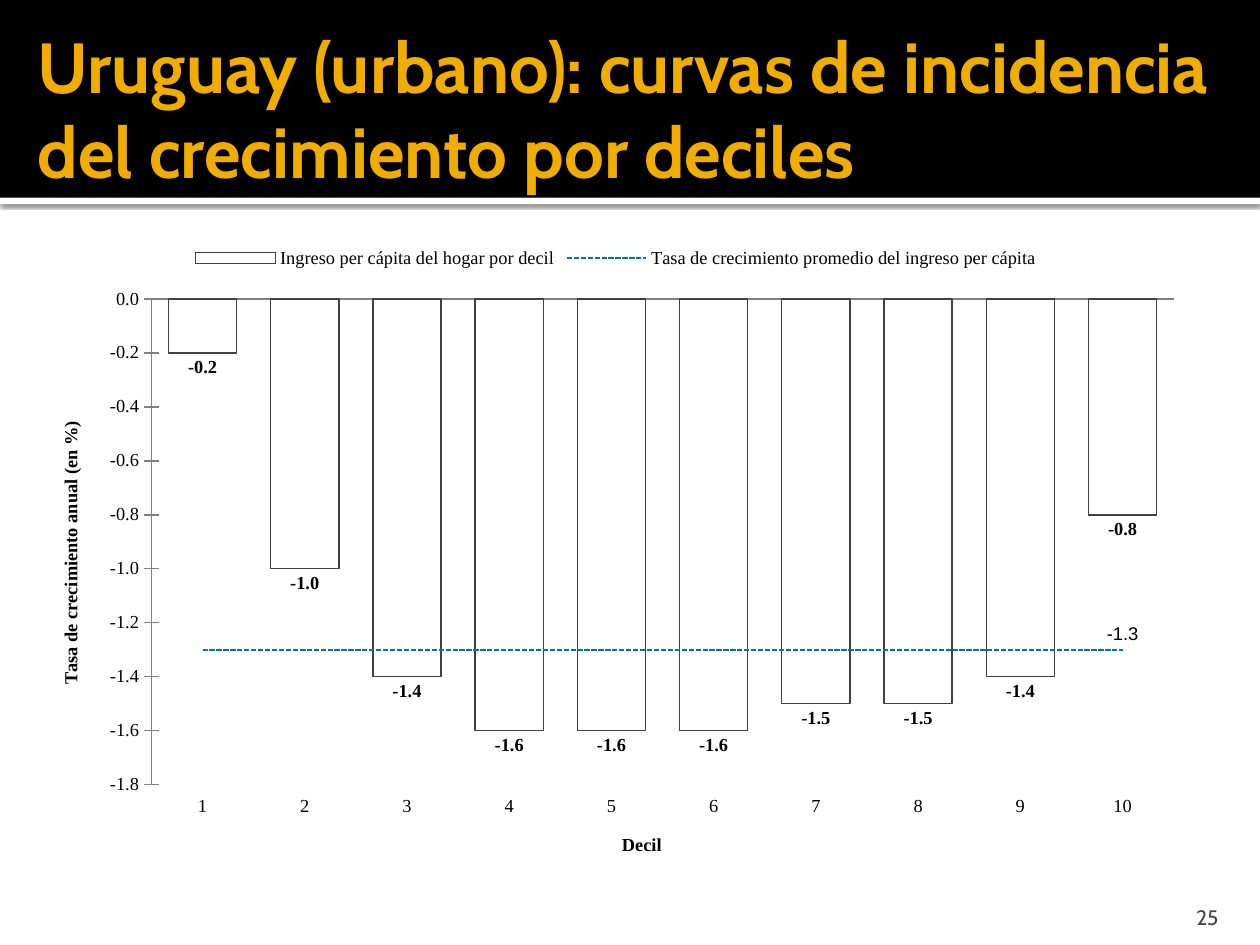
import pptx
import pptx.chart.data
import pptx.dml.color
import pptx.enum.chart
import pptx.enum.dml
import pptx.enum.shapes
import pptx.enum.text
import pptx.oxml
import pptx.oxml.ns
import pptx.util
from pptx.util import Inches

COLORS = {
    "black": "000000", "white": "FFFFFF", "title": "F0AD00", "number": "454545",
    "bar_line": "404040", "average": "0070C0", "axis": "808080",
}
CHART_FONT = "Times New Roman"
NUMBER_FORMAT = "#,##0.0"
DECILE_GROWTH = [-0.2, -1.0, -1.4, -1.6, -1.6, -1.6, -1.5, -1.5, -1.4, -0.8]
AVERAGE_GROWTH = -1.3


def color(name):
    return pptx.dml.color.RGBColor.from_string(COLORS[name])


def paint(fill, name):
    fill.solid()
    fill.fore_color.rgb = color(name)


def draw_line(line, name, width):
    line.color.rgb = color(name)
    line.width = pptx.util.Pt(width)


def style_font(font, size, name, family, bold=False):
    font.size = pptx.util.Pt(size)
    font.color.rgb = color(name)
    font.name = family
    font.bold = bold


def xml(text):
    """Parse an element, with the namespaces declared at its %s mark."""
    return pptx.oxml.parse_xml(text % pptx.oxml.ns.nsdecls("a", "c"))


def add_band(page, top, height, name):
    band = page.shapes.add_shape(
        pptx.enum.shapes.MSO_SHAPE.RECTANGLE, 0, Inches(top), Inches(10), Inches(height))
    paint(band.fill, name)
    band.line.fill.background()
    band.shadow.inherit = False
    return band


def add_soft_shadow(shape):
    effects = shape._element.spPr.find(pptx.oxml.ns.qn("a:effectLst"))
    effects.append(xml(
        '<a:outerShdw %s blurRad="31750" dist="10160" dir="5400000" algn="tl" rotWithShape="0">'
        '<a:srgbClr val="000000"><a:alpha val="60000"/></a:srgbClr></a:outerShdw>'))


def add_text(page, text, place, margins, anchor, align, size, name, bold=False):
    box = page.shapes.add_textbox(*map(Inches, place))
    frame = box.text_frame
    frame.word_wrap = True
    frame.vertical_anchor = anchor
    (frame.margin_left, frame.margin_top,
     frame.margin_right, frame.margin_bottom) = map(Inches, margins)
    para = frame.paragraphs[0]
    para.text = text
    para.alignment = align
    style_font(para.font, size, name, "Cabin", bold)


def style_axis(axis, title, tick_mark):
    axis.has_major_gridlines = False
    axis.major_tick_mark = tick_mark
    axis.minor_tick_mark = pptx.enum.chart.XL_TICK_MARK.NONE
    draw_line(axis.format.line, "axis", 0.75)
    style_font(axis.tick_labels.font, 10.5, "black", CHART_FONT)
    para = axis.axis_title.text_frame.paragraphs[0]
    para.text = title
    style_font(para.font, 10.5, "black", CHART_FONT, True)


def move_last_series_to_line(chart):
    """Turn the last column series into a line plot on the same axes."""
    qn = pptx.oxml.ns.qn
    bars = chart.plots[0]._element
    series = bars.findall(qn("c:ser"))[-1]
    invert = series.find(qn("c:invertIfNegative"))
    if invert is not None:
        series.remove(invert)
    lines = xml('<c:lineChart %s><c:grouping val="standard"/><c:varyColors val="0"/>'
                '<c:marker val="1"/></c:lineChart>')
    lines.insert(2, series)
    for axis_id in bars.findall(qn("c:axId")):
        lines.append(xml('<c:axId %s val="' + axis_id.get("val") + '"/>'))
    bars.addnext(lines)


def place_plot_area(chart, left, top, width, height):
    """Fix the inner plot area, in fractions of the chart."""
    qn = pptx.oxml.ns.qn
    area = chart._chartSpace.chart.plotArea
    old_layout = area.find(qn("c:layout"))
    if old_layout is not None:
        area.remove(old_layout)
    parts = "".join(f'<c:{key} val="{value}"/>' for key, value in
                    zip("xywh", (left, top, width, height)))
    area.insert(0, xml(
        '<c:layout %s><c:manualLayout><c:layoutTarget val="inner"/>'
        '<c:xMode val="edge"/><c:yMode val="edge"/>'
        + parts + '</c:manualLayout></c:layout>'))


def style_bars(plot):
    plot.gap_width = 50
    plot.vary_by_categories = False
    series = plot.series[0]
    series.invert_if_negative = False
    paint(series.format.fill, "white")
    draw_line(series.format.line, "bar_line", 0.75)
    labels = series.data_labels
    labels.show_value = True
    labels.number_format = NUMBER_FORMAT
    labels.number_format_is_linked = False
    labels.position = pptx.enum.chart.XL_LABEL_POSITION.OUTSIDE_END
    style_font(labels.font, 10.5, "black", CHART_FONT, True)


def style_average(series):
    series.smooth = False
    series.marker.style = pptx.enum.chart.XL_MARKER_STYLE.NONE
    draw_line(series.format.line, "average", 1)
    series.format.line.dash_style = pptx.enum.dml.MSO_LINE.SQUARE_DOT
    series.data_labels.show_value = False
    label = series.points[len(DECILE_GROWTH) - 1].data_label
    style_font(label.font, 10.5, "black", "Arial")
    label.position = pptx.enum.chart.XL_LABEL_POSITION.ABOVE


def add_growth_chart(page):
    count = len(DECILE_GROWTH)
    data = pptx.chart.data.CategoryChartData(number_format=NUMBER_FORMAT)
    data.categories = [str(decile) for decile in range(1, count + 1)]
    data.add_series("Ingreso per cápita del hogar por decil", DECILE_GROWTH)
    data.add_series("Tasa de crecimiento promedio del ingreso per cápita",
                    [AVERAGE_GROWTH] * count)
    chart = page.shapes.add_chart(
        pptx.enum.chart.XL_CHART_TYPE.COLUMN_CLUSTERED,
        Inches(0.28), Inches(1.86), Inches(9.22), Inches(5.14), data).chart
    style_font(chart.font, 10.5, "black", CHART_FONT)
    chart.has_title = False
    chart.has_legend = True
    chart.legend.position = pptx.enum.chart.XL_LEGEND_POSITION.TOP
    chart.legend.include_in_layout = False
    style_font(chart.legend.font, 10.5, "black", CHART_FONT)

    ticks = pptx.enum.chart.XL_TICK_MARK
    style_axis(chart.category_axis, "Decil", ticks.NONE)
    chart.category_axis.tick_label_position = pptx.enum.chart.XL_TICK_LABEL_POSITION.LOW
    values = chart.value_axis
    style_axis(values, "Tasa de crecimiento anual (en %)", ticks.CROSS)
    values.minimum_scale, values.maximum_scale, values.major_unit = -1.8, 0, 0.2
    values.tick_labels.number_format = NUMBER_FORMAT
    values.tick_labels.number_format_is_linked = False

    move_last_series_to_line(chart)
    style_bars(chart.plots[0])
    style_average(chart.plots[1].series[0])
    place_plot_area(chart, 0.1, 0.1, 0.88, 0.75)


def main():
    deck = pptx.Presentation()
    deck.slide_width, deck.slide_height = Inches(10), Inches(7.5)
    page = deck.slides.add_slide(deck.slide_layouts[6])
    add_soft_shadow(add_band(page, 1.57, 0.05, "white"))
    add_band(page, 0, 1.57, "black")
    anchors, aligns = pptx.enum.text.MSO_ANCHOR, pptx.enum.text.PP_ALIGN
    add_text(page, "Uruguay (urbano): curvas de incidencia del crecimiento por deciles",
             (0.2, 0.17, 9.8, 1.37), (0.1, 0.05, 0.05, 0.05),
             anchors.MIDDLE, aligns.LEFT, 40.5, "title", True)
    add_growth_chart(page)
    add_text(page, "25", (8.97, 7.08, 0.8, 0.3), (0.1, 0.05, 0.1, 0),
             anchors.BOTTOM, aligns.RIGHT, 12, "number")
    deck.save("out.pptx")


if __name__ == "__main__":
    main()
